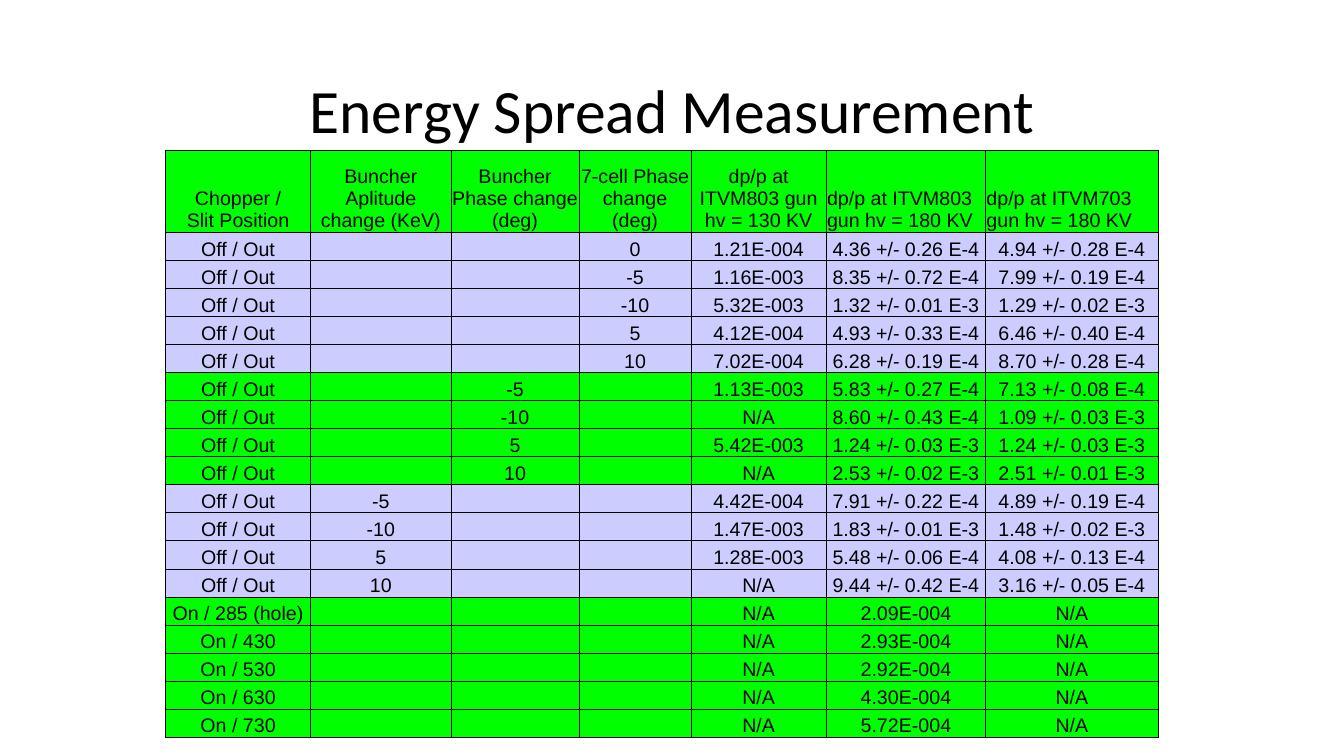
from lxml import etree
from pptx import Presentation
from pptx import util as u
from pptx.dml.color import RGBColor
from pptx.enum import text
from pptx.oxml import ns

BLACK = RGBColor(0x00, 0x00, 0x00)
GREEN = RGBColor(0x00, 0xFF, 0x00)
LAVENDER = RGBColor(0xCC, 0xCC, 0xFF)

HEADINGS = [
    "Chopper /\nSlit Position",
    "Buncher Aplitude change (KeV)",
    "Buncher Phase change (deg)",
    "7-cell Phase change (deg)",
    "dp/p at ITVM803 gun hv = 130 KV",
    "dp/p at ITVM803 gun hv = 180 KV",
    "dp/p at ITVM703 gun hv = 180 KV",
]
SCANS = [
    (LAVENDER, 3, [
        ("0", "1.21E-004", "4.36 +/- 0.26 E-4", "4.94 +/- 0.28 E-4"),
        ("-5", "1.16E-003", "8.35 +/- 0.72 E-4", "7.99 +/- 0.19 E-4"),
        ("-10", "5.32E-003", "1.32 +/- 0.01 E-3", "1.29 +/- 0.02 E-3"),
        ("5", "4.12E-004", "4.93 +/- 0.33 E-4", "6.46 +/- 0.40 E-4"),
        ("10", "7.02E-004", "6.28 +/- 0.19 E-4", "8.70 +/- 0.28 E-4"),
    ]),
    (GREEN, 2, [
        ("-5", "1.13E-003", "5.83 +/- 0.27 E-4", "7.13 +/- 0.08 E-4"),
        ("-10", "N/A", "8.60 +/- 0.43 E-4", "1.09 +/- 0.03 E-3"),
        ("5", "5.42E-003", "1.24 +/- 0.03 E-3", "1.24 +/- 0.03 E-3"),
        ("10", "N/A", "2.53 +/- 0.02 E-3", "2.51 +/- 0.01 E-3"),
    ]),
    (LAVENDER, 1, [
        ("-5", "4.42E-004", "7.91 +/- 0.22 E-4", "4.89 +/- 0.19 E-4"),
        ("-10", "1.47E-003", "1.83 +/- 0.01 E-3", "1.48 +/- 0.02 E-3"),
        ("5", "1.28E-003", "5.48 +/- 0.06 E-4", "4.08 +/- 0.13 E-4"),
        ("10", "N/A", "9.44 +/- 0.42 E-4", "3.16 +/- 0.05 E-4"),
    ]),
]
SLITS = [
    ("285 (hole)", "2.09E-004"),
    ("430", "2.93E-004"),
    ("530", "2.92E-004"),
    ("630", "4.30E-004"),
    ("730", "5.72E-004"),
]
COLUMN_SHARES = [1.44, 1.39, 1.27, 1.11, 1.34, 1.58, 1.71]
HEADING_HEIGHT = 2.07


def measurement_rows():
    rows = [(GREEN, HEADINGS)]
    for colour, scanned, readings in SCANS:
        for change, *spreads in readings:
            changes = ["", "", ""]
            changes[scanned - 1] = change
            rows.append((colour, ["Off / Out", *changes, *spreads]))
    for slit, spread in SLITS:
        rows.append((GREEN, [f"On / {slit}", "", "", "", "N/A", spread, "N/A"]))
    return rows


def add_words(paragraph, words, font, size):
    for number, line in enumerate(words.split("\n")):
        if number:
            paragraph.add_line_break()
        run = paragraph.add_run()
        run.text = line
        run.font.name = font
        run.font.size = u.Pt(size)
        run.font.color.rgb = BLACK


def add_borders(cell):
    properties = cell._tc.get_or_add_tcPr()
    for side in ("lnL", "lnR", "lnT", "lnB"):
        border = etree.SubElement(properties, ns.qn(f"a:{side}"), w=str(u.Pt(0.5)))
        ink = etree.SubElement(border, ns.qn("a:solidFill"))
        etree.SubElement(ink, ns.qn("a:srgbClr"), val=str(BLACK))


def fill_cell(cell, words, colour, alignment):
    add_borders(cell)
    cell.fill.solid()
    cell.fill.fore_color.rgb = colour
    cell.vertical_anchor = text.MSO_ANCHOR.BOTTOM
    cell.margin_left = cell.margin_right = cell.margin_top = u.Cm(0.02)
    cell.margin_bottom = 0
    paragraph = cell.text_frame.paragraphs[0]
    paragraph.alignment = alignment
    if words:
        add_words(paragraph, words, "Arial", 14)
    else:
        etree.SubElement(paragraph._p, ns.qn("a:endParaRPr"), sz="1400")


def draw_title(slide, left, top, width, height):
    title = slide.shapes.add_textbox(u.Cm(left), u.Cm(top), u.Cm(width), u.Cm(height))
    frame = title.text_frame
    frame.word_wrap = True
    frame.vertical_anchor = text.MSO_ANCHOR.MIDDLE
    paragraph = frame.paragraphs[0]
    paragraph.alignment = text.PP_ALIGN.CENTER
    paragraph.line_spacing = 0.9
    add_words(paragraph, "Energy Spread Measurement", "Calibri", 44)


def draw_measurements(slide, left, top, width, height):
    rows = measurement_rows()
    measurements = slide.shapes.add_table(
        len(rows), len(HEADINGS), u.Cm(left), u.Cm(top), u.Cm(width), u.Cm(height)
    ).table
    measurements.first_row = False
    measurements.horz_banding = False
    for column, share in zip(measurements.columns, COLUMN_SHARES):
        column.width = u.Cm(width * share / sum(COLUMN_SHARES))
    reading_height = (height - HEADING_HEIGHT) / (len(rows) - 1)
    for r, (colour, entries) in enumerate(rows):
        measurements.rows[r].height = u.Cm(reading_height if r else HEADING_HEIGHT)
        for c, words in enumerate(entries):
            left_aligned = r == 0 and c >= 5
            alignment = text.PP_ALIGN.LEFT if left_aligned else text.PP_ALIGN.CENTER
            fill_cell(measurements.cell(r, c), words, colour, alignment)


def main():
    deck = Presentation()
    deck.slide_width = u.Cm(33.87)
    deck.slide_height = u.Cm(19.05)
    slide = deck.slides.add_slide(deck.slide_layouts[6])
    draw_title(slide, 2.34, 1.02, 29.21, 3.68)
    draw_measurements(slide, 4.17, 3.78, 25.02, 14.81)
    deck.save("out.pptx")


if __name__ == "__main__":
    main()
